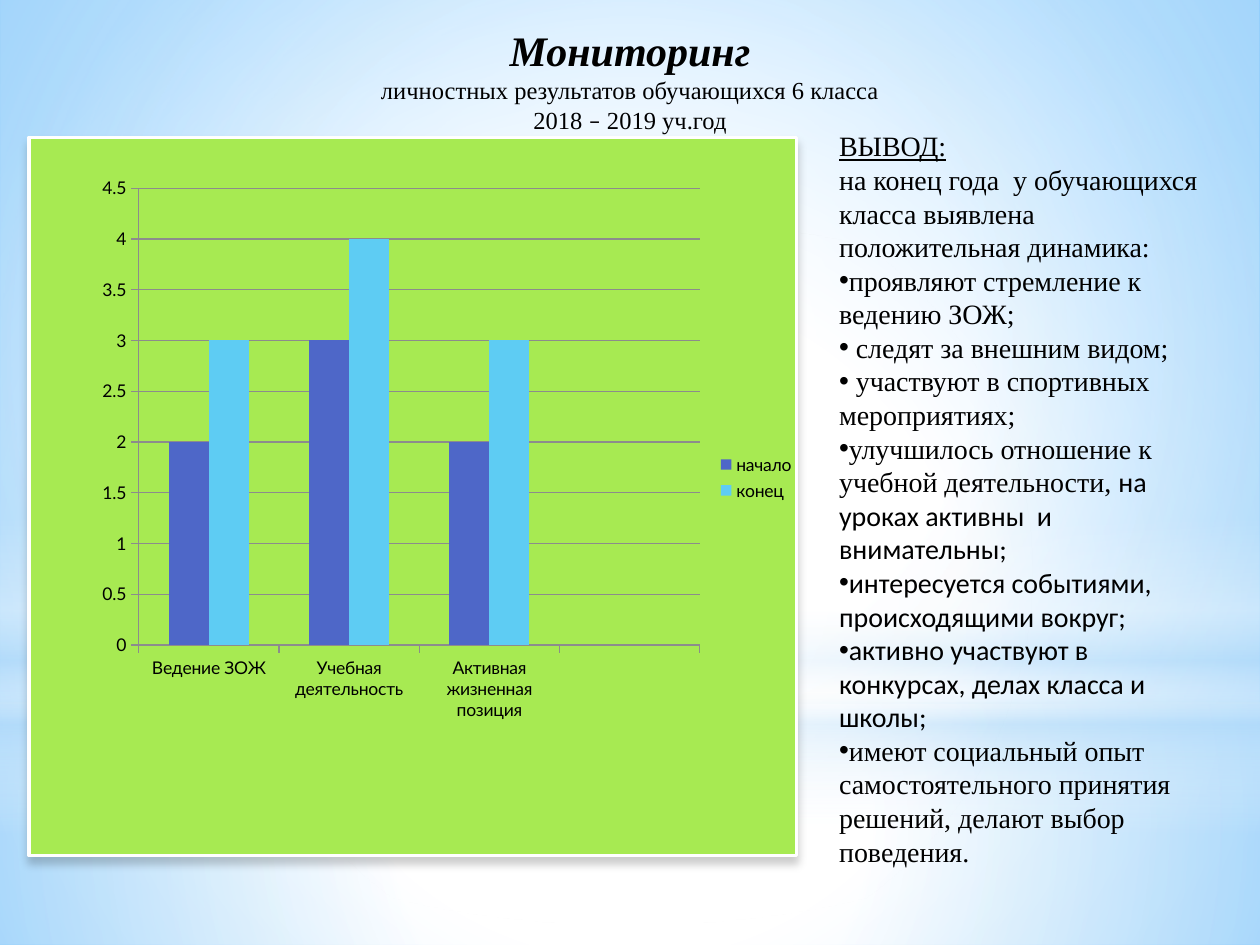
from dataclasses import dataclass
from typing import NamedTuple, Optional

from lxml.etree import SubElement
from pptx import Presentation
from pptx.chart.data import CategoryChartData
from pptx.dml.color import RGBColor
from pptx.enum.chart import XL_CHART_TYPE, XL_LEGEND_POSITION, XL_TICK_MARK
from pptx.enum.shapes import MSO_SHAPE
from pptx.enum.text import MSO_ANCHOR, MSO_AUTO_SIZE, PP_ALIGN
from pptx.oxml.ns import qn
from pptx.util import Inches, Pt


@dataclass(frozen=True)
class Theme:
    serif: str = "Times New Roman"
    sans: str = "Calibri"
    chart_font: str = "Lato"
    text: str = "000000"
    white: str = "FFFFFF"
    sky: str = "63BCFF"
    mist: str = "B4DCFA"
    panel: str = "A7EA52"
    grid: str = "8C8C8C"
    series: tuple = ("4E67C8", "5ECCF3")
    heading_size: int = 24
    subtitle_size: int = 14
    body_size: int = 16
    chart_size: int = 10


THEME = Theme()


class Stop(NamedTuple):
    position: int
    color: str
    opacity: int = 100


class Glow(NamedTuple):
    shape: MSO_SHAPE
    box: tuple
    stops: list
    focus: Optional[tuple] = (50, 50, 50, 50)  # None gives a vertical gradient


class Span(NamedTuple):
    text: str
    size: int = THEME.body_size
    font: str = THEME.serif
    bold: bool = False
    italic: bool = False
    underline: bool = False


class Line(NamedTuple):
    spans: list
    bullet: bool = False


WHITE, MIST = THEME.white, THEME.mist
PAGE_STOPS = [Stop(0, WHITE), Stop(42, WHITE), Stop(100, THEME.sky)]
GLOWS = [
    Glow(MSO_SHAPE.RECTANGLE, (0, 5.58, 10, 1.92),
         [Stop(0, WHITE, 91), Stop(37, WHITE, 76), Stop(100, MIST, 79)]),
    Glow(MSO_SHAPE.RECTANGLE, (0, 0, 10, 5.58),
         [Stop(0, WHITE, 89), Stop(48, WHITE, 62), Stop(100, MIST, 79)]),
    Glow(MSO_SHAPE.RECTANGLE, (0, 4.12, 10, 2.5),
         [Stop(0, WHITE, 0), Stop(29, WHITE, 30), Stop(45, MIST, 40),
          Stop(55, WHITE, 26), Stop(65, MIST, 60), Stop(100, WHITE, 0)], None),
    Glow(MSO_SHAPE.OVAL, (0, 1.75, 10, 5.58), [Stop(0, WHITE), Stop(56, WHITE, 0)]),
]

SMALL = THEME.subtitle_size
TITLE = [
    Line([Span("Мониторинг", THEME.heading_size, bold=True, italic=True)]),
    Line([Span("личностных результатов обучающихся 6 класса", SMALL)]),
    Line([Span("2018 ", SMALL), Span("–", SMALL, THEME.sans), Span(" 2019 уч.год", SMALL)]),
]
CONCLUSION = [
    Line([Span("ВЫВОД:", underline=True)]),
    Line([Span("на конец года  у обучающихся  класса выявлена положительная динамика:")]),
    Line([Span("проявляют стремление к ведению ЗОЖ;")], True),
    Line([Span(" следят за внешним видом;")], True),
    Line([Span(" участвуют в спортивных мероприятиях;")], True),
    Line([Span("улучшилось отношение к учебной деятельности, "),
          Span("на уроках активны  и внимательны;", font=THEME.sans)], True),
    Line([Span("интересуется событиями, происходящими вокруг;", font=THEME.sans)], True),
    Line([Span("активно участвуют в конкурсах, делах класса и школы;", font=THEME.sans)], True),
    Line([Span("имеют социальный опыт самостоятельного принятия решений, "
               "делают выбор поведения.")], True),
]

CATEGORIES = ["Ведение ЗОЖ", "Учебная деятельность", "Активная жизненная позиция", ""]
RESULTS = {"начало": (2, 3, 2, None), "конец": (3, 4, 3, None)}
PLOT_AREA = {"x": 0.094, "y": 0.048, "w": 0.76, "h": 0.714}


def rgb(color: str) -> RGBColor:
    return RGBColor.from_string(color)


def inches(box: tuple) -> list:
    return [Inches(length) for length in box]


def add_color(parent, color: str, opacity: int) -> None:
    node = SubElement(parent, qn("a:srgbClr"), val=color)
    if opacity < 100:
        SubElement(node, qn("a:alpha"), val=str(opacity * 1000))


def paint_gradient(fill, owner, stops: list, focus: Optional[tuple]) -> None:
    """Fill with a gradient, radial around focus or else from top to bottom."""
    fill.gradient()
    gradient = next(owner.iter(qn("a:gradFill")))
    for child in list(gradient):
        gradient.remove(child)
    stop_list = SubElement(gradient, qn("a:gsLst"))
    for stop in stops:
        node = SubElement(stop_list, qn("a:gs"), pos=str(stop.position * 1000))
        add_color(node, stop.color, stop.opacity)
    if focus is None:
        SubElement(gradient, qn("a:lin"), ang="5400000", scaled="0")
    else:
        radial = SubElement(gradient, qn("a:path"), path="circle")
        sides = {side: str(part * 1000) for side, part in zip("ltrb", focus)}
        SubElement(radial, qn("a:fillToRect"), **sides)


def add_glow(page, glow: Glow) -> None:
    shape = page.shapes.add_shape(glow.shape, *inches(glow.box))
    paint_gradient(shape.fill, shape._element, glow.stops, glow.focus)
    shape.line.fill.background()
    shape.shadow.inherit = False


def write_text(holder, box: tuple, lines: list, align: PP_ALIGN, bottom: float) -> None:
    """Move a placeholder to the front and fill it with formatted lines."""
    page_tree = holder._element.getparent()
    page_tree.append(holder._element)
    holder.left, holder.top, holder.width, holder.height = inches(box)
    frame = holder.text_frame
    frame.word_wrap = True
    frame.auto_size = MSO_AUTO_SIZE.NONE
    frame.vertical_anchor = MSO_ANCHOR.MIDDLE
    frame.margin_bottom = Inches(bottom)
    frame.text = "\n".join("".join(span.text for span in line.spans) for line in lines)
    for para, line in zip(frame.paragraphs, lines):
        para.alignment = align
        para.space_before = para.space_after = Pt(0)
        properties = para._p.get_or_add_pPr()
        properties.set("marL", "0")
        properties.set("indent", "0")
        if line.bullet:
            SubElement(properties, qn("a:buFont"), typeface="Arial")
            SubElement(properties, qn("a:buChar"), char="•")
        else:
            SubElement(properties, qn("a:buNone"))
        para.text = ""
        for span in line.spans:
            run = para.add_run()
            run.text = span.text
            font = run.font
            font.name, font.size = span.font, Pt(span.size)
            font.bold, font.italic, font.underline = span.bold, span.italic, span.underline
            font.color.rgb = rgb(THEME.text)


def add_panel(page, box: tuple) -> None:
    panel = page.shapes.add_shape(MSO_SHAPE.RECTANGLE, *inches(box))
    panel.fill.solid()
    panel.fill.fore_color.rgb = rgb(THEME.panel)
    panel.line.color.rgb = rgb(WHITE)
    panel.line.width = Pt(2)
    panel.shadow.inherit = False
    effects = next(panel._element.iter(qn("a:effectLst")))
    shadow = SubElement(effects, qn("a:outerShdw"), blurRad=str(Pt(5)),
                        dist=str(Pt(4)), dir="5400000", rotWithShape="0")
    add_color(shadow, THEME.text, 20)


def add_results_chart(page, box: tuple) -> None:
    data = CategoryChartData()
    data.categories = CATEGORIES
    for name, values in RESULTS.items():
        data.add_series(name, values)
    chart = page.shapes.add_chart(XL_CHART_TYPE.COLUMN_CLUSTERED, *inches(box), data).chart
    chart.has_title = False
    chart.font.name, chart.font.size = THEME.chart_font, Pt(THEME.chart_size)
    chart.font.color.rgb = rgb(THEME.text)
    chart.has_legend = True
    chart.legend.position = XL_LEGEND_POSITION.RIGHT
    chart.legend.include_in_layout = False

    # Columns
    plot = chart.plots[0]
    plot.gap_width, plot.overlap, plot.vary_by_categories = 150, 0, False
    for series, color in zip(plot.series, THEME.series):
        series.format.fill.solid()
        series.format.fill.fore_color.rgb = rgb(color)

    # Axes
    chart.value_axis.has_major_gridlines = True
    lines = [chart.value_axis.major_gridlines.format.line]
    for axis in (chart.category_axis, chart.value_axis):
        axis.major_tick_mark = XL_TICK_MARK.OUTSIDE
        lines.append(axis.format.line)
    for line in lines:
        line.color.rgb = rgb(THEME.grid)
        line.width = Pt(0.75)

    # Fixed plot area
    area = chart._chartSpace.chart.plotArea
    for old in area.findall(qn("c:layout")):
        area.remove(old)
    layout = SubElement(area, qn("c:layout"))
    area.insert(0, layout)
    manual = SubElement(layout, qn("c:manualLayout"))
    settings = {"layoutTarget": "inner", "xMode": "edge", "yMode": "edge", **PLOT_AREA}
    for tag, value in settings.items():
        SubElement(manual, qn(f"c:{tag}"), val=str(value))


def main() -> None:
    deck = Presentation()
    deck.slide_width, deck.slide_height = Inches(10), Inches(7.5)
    page = deck.slides.add_slide(deck.slide_layouts[1])

    # Sky background
    paint_gradient(page.background.fill, page._element, PAGE_STOPS, (24, 44, 24, 12))
    for glow in GLOWS:
        add_glow(page, glow)

    # Title and conclusion
    title, body = page.shapes.title, page.placeholders[1]
    write_text(title, (0, 0, 10, 1.41), TITLE, PP_ALIGN.CENTER, bottom=0.2)
    write_text(body, (6.56, 0.94, 3.2, 6.33), CONCLUSION, PP_ALIGN.LEFT, bottom=0.35)

    # Chart on its panel
    add_panel(page, (0.23, 1.09, 6.09, 5.7))
    add_results_chart(page, (0.55, 1.25, 5.86, 5.08))
    deck.save("out.pptx")


if __name__ == "__main__":
    main()
